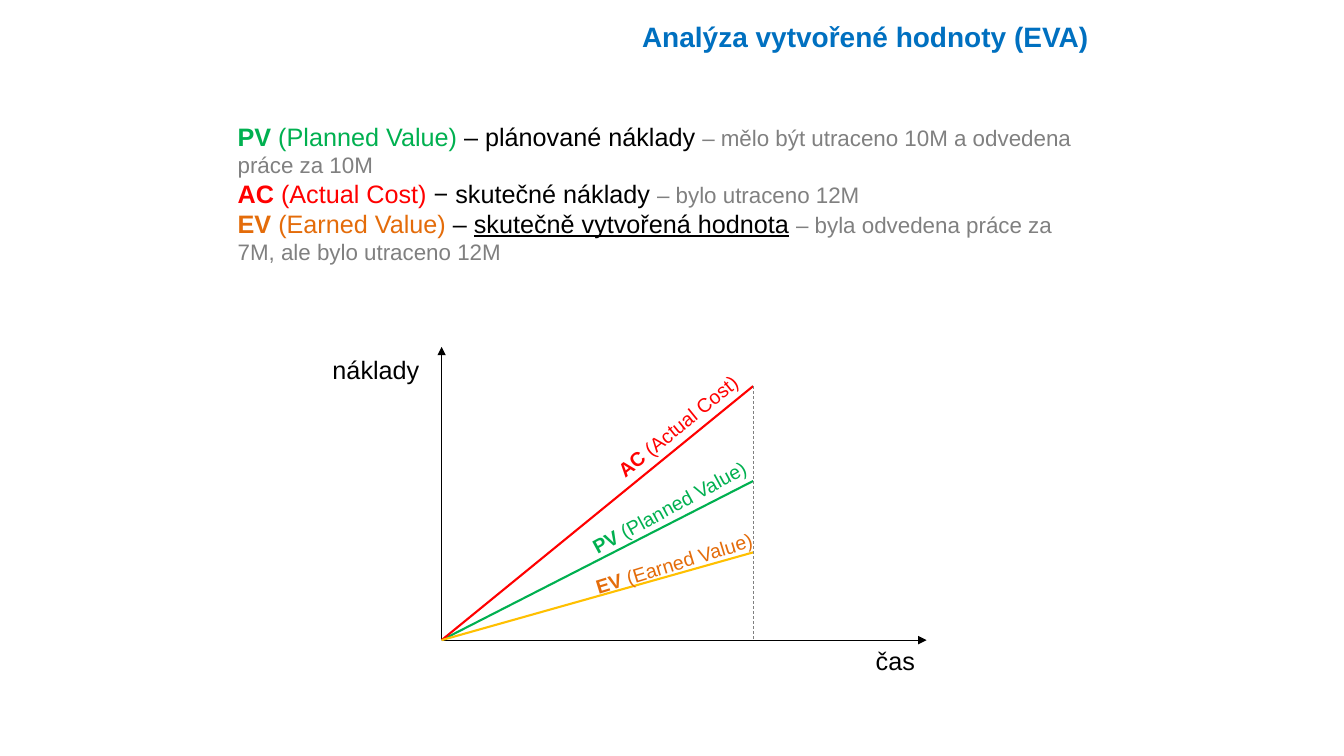
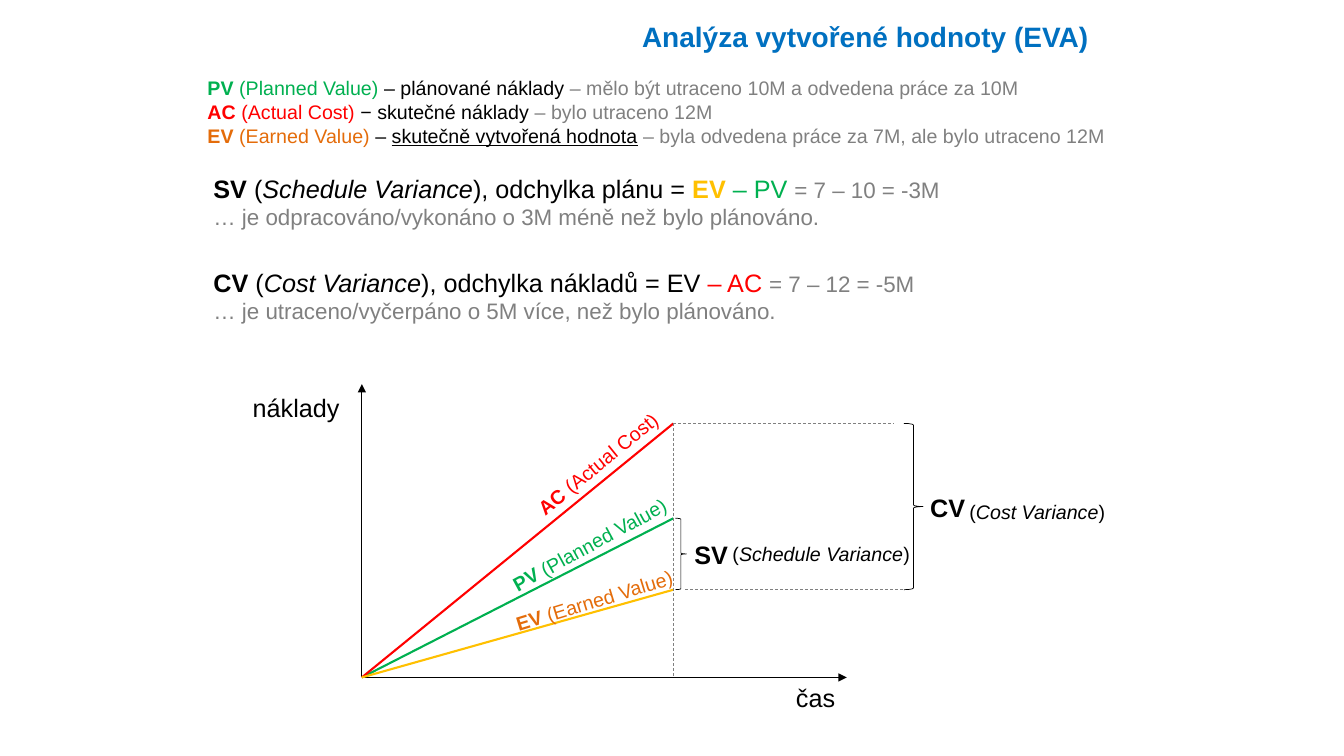
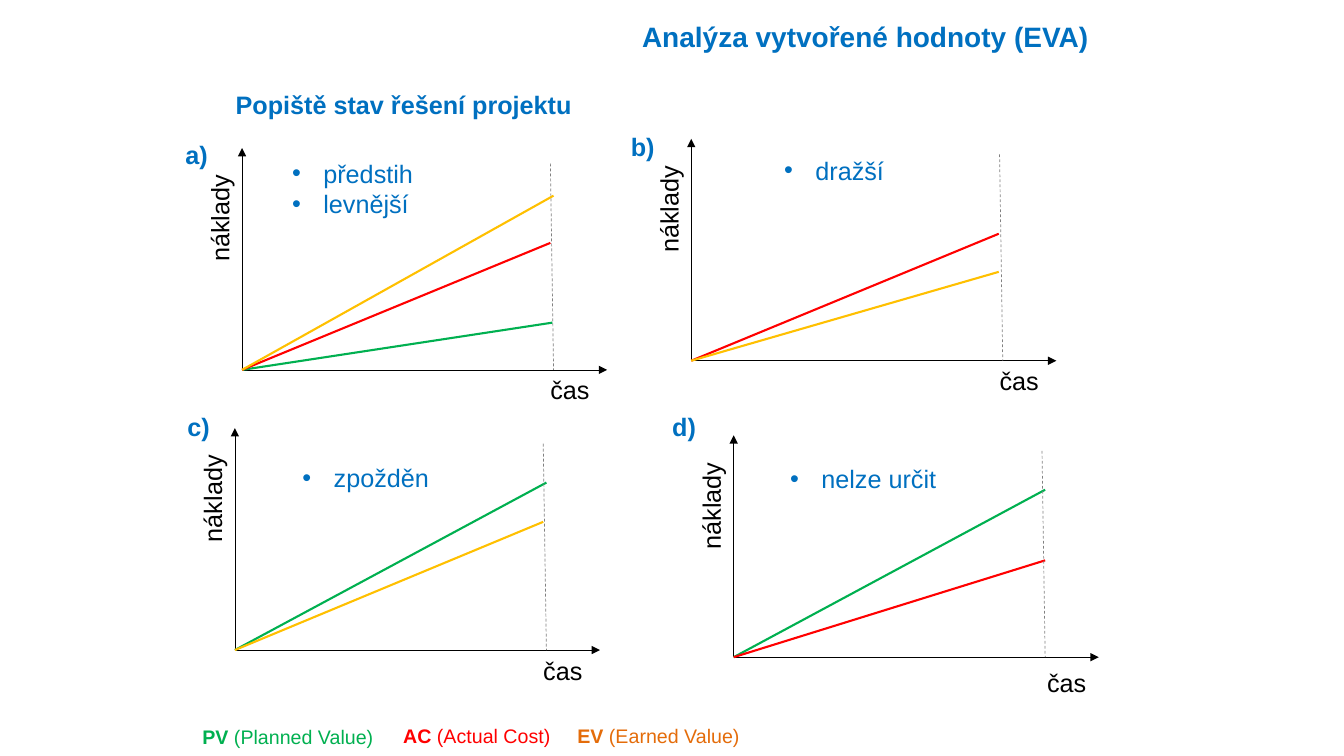
import lxml.etree
import pptx
import pptx.dml.color
import pptx.enum.dml
import pptx.enum.shapes
import pptx.enum.text
import pptx.oxml.ns
import pptx.util

Cm = pptx.util.Cm
Pt = pptx.util.Pt
qn = pptx.oxml.ns.qn


class Theme:
    font = "Arial"
    black, gray, blue = "000000", "808080", "0070C0"
    green, red, orange, yellow = "00B050", "FF0000", "E46C0A", "FFC000"
    title, body, detail, small = 20, 18, 16, 14
    thin, thick = 0.5, 1.5


def add_text(slide, text, left, top, width, height=1.02, *, size=Theme.body, color=Theme.black,
             bold=False, italic=False, underline=False, wrap=False, rotation=0, bullet=False):
    """Take a string, or paragraphs given as lists of (text, format) runs."""
    shape = slide.shapes.add_textbox(Cm(left), Cm(top), Cm(width), Cm(height))
    shape.rotation = rotation
    frame = shape.text_frame
    frame.word_wrap = wrap
    frame.auto_size = pptx.enum.text.MSO_AUTO_SIZE.SHAPE_TO_FIT_TEXT
    base = dict(size=size, color=color, bold=bold, italic=italic, underline=underline)
    paragraphs = [[(line, {})] for line in text.split("\n")] if isinstance(text, str) else text
    for index, runs in enumerate(paragraphs):
        paragraph = frame.add_paragraph() if index else frame.paragraphs[0]
        if bullet:
            properties = paragraph._p.get_or_add_pPr()
            properties.set("marL", str(Cm(0.79)))
            properties.set("indent", str(-Cm(0.79)))
            lxml.etree.SubElement(properties, qn("a:buFont")).set("typeface", Theme.font)
            lxml.etree.SubElement(properties, qn("a:buChar")).set("char", "•")
        for content, changes in runs:
            look = base | changes
            run = paragraph.add_run()
            run.text = content
            run.font.name = Theme.font
            run.font.size = Pt(look["size"])
            run.font.bold = look["bold"]
            run.font.italic = look["italic"]
            run.font.underline = look["underline"]
            run.font.color.rgb = pptx.dml.color.RGBColor.from_string(look["color"])


def add_line(slide, start, end, color=Theme.black, width=Theme.thin, dashed=False, arrow=False):
    connector = slide.shapes.add_connector(
        pptx.enum.shapes.MSO_CONNECTOR.STRAIGHT, *(Cm(value) for value in (*start, *end)))
    connector.line.width = Pt(width)
    connector.line.color.rgb = pptx.dml.color.RGBColor.from_string(color)
    if dashed:
        connector.line.dash_style = pptx.enum.dml.MSO_LINE.DASH
    properties = connector._element.spPr
    if arrow:
        lxml.etree.SubElement(properties.find(qn("a:ln")), qn("a:tailEnd")).set("type", "triangle")
    lxml.etree.SubElement(properties, qn("a:effectLst"))


presentation = pptx.Presentation()
presentation.slide_width, presentation.slide_height = Cm(33.87), Cm(19.05)
slides = [presentation.slides.add_slide(presentation.slide_layouts[6]) for _ in range(3)]
terms_slide, variance_slide, exercise_slide = slides
for slide in slides:
    add_text(slide, "Analýza vytvořené hodnoty (EVA)", 15.93, 0.36, 17.5, 1.12,
             size=Theme.title, color=Theme.blue, bold=True, wrap=True)

# Terms: abbreviation, name, text colour, line colour, label width
terms = {
    "PV": ("PV", " (Planned Value)", Theme.green, Theme.green, 4.85),
    "AC": ("AC ", "(Actual Cost)", Theme.red, Theme.red, 4.24),
    "EV": ("EV ", "(Earned Value)", Theme.orange, Theme.yellow, 4.78),
}
meanings = {
    "PV": ("– ", "plánované náklady", "– mělo být utraceno 10M a odvedena práce za 10M"),
    "AC": ("− ", "skutečné náklady", "– bylo utraceno 12M"),
    "EV": ("– ", "skutečně vytvořená hodnota", "– byla odvedena práce za 7M, ale bylo utraceno 12M"),
}
for slide, box, size, detail_size in (
    (terms_slide, (5.74, 2.92, 21.89, 3.94), Theme.body, Theme.detail),
    (variance_slide, (4.98, 1.8, 23.55, 2.06), Theme.small, Theme.small),
):
    paragraphs = []
    for key, (dash, meaning, example) in meanings.items():
        short, name, color, _, _ = terms[key]
        paragraphs.append([
            (short, dict(color=color, bold=True)),
            (name + " ", dict(color=color)),
            (dash, {}),
            (meaning, dict(underline=key == "EV")),
            (" ", {}),
            (example, dict(color=Theme.gray, size=detail_size)),
        ])
    add_text(slide, paragraphs, *box, size=size, wrap=True)

# Cost-over-time diagrams; all points are offsets from the origin
large = dict(
    axes=(12.22, 7.39), deadline=((7.85, -6.4), (7.85, 0)), cost=(-3, -7.32), turn=0, time=(10.69, 0),
    ends={"PV": (7.85, -4.01), "AC": (7.85, -6.4), "EV": (7.85, -2.21)},
    labels={"AC": (3.84, -5.82, -39.1), "PV": (3.33, -3.78, -28.5), "EV": (3.56, -2.39, -17.1)},
)
small = dict(
    axes=(9.2, 5.59), deadline=((7.77, -5.2), (7.85, 0)), cost=(-1.93, -4.34), turn=270,
    time=(7.52, 0), labels={},
)
variance_origin = (9.12, 17.07)
diagrams = [
    (terms_slide, (11.13, 16.13), large),
    (variance_slide, variance_origin, large),
    (exercise_slide, (6.1, 9.32),
     small | dict(ends={"PV": (7.82, -1.19), "AC": (7.77, -3.2), "EV": (7.85, -4.39)})),
    (exercise_slide, (17.42, 9.09), small | dict(ends={"AC": (7.75, -3.2), "EV": (7.75, -2.24)})),
    (exercise_slide, (5.92, 16.38), small | dict(ends={"PV": (7.85, -4.22), "EV": (7.77, -3.23)})),
    (exercise_slide, (18.49, 16.56),
     small | dict(ends={"PV": (7.85, -4.22), "AC": (7.85, -2.44)}, time=(7.65, 0.13))),
]
for slide, (x, y), diagram in diagrams:
    axis_width, axis_height = diagram["axes"]
    add_line(slide, (x, y), (x, y - axis_height), arrow=True)
    add_line(slide, (x, y), (x + axis_width, y), arrow=True)
    for key, (dx, dy) in diagram["ends"].items():
        add_line(slide, (x, y), (x + dx, y + dy), terms[key][3], Theme.thick)
    add_line(slide, *((x + dx, y + dy) for dx, dy in diagram["deadline"]), Theme.gray, dashed=True)
    add_text(slide, "náklady", x + diagram["cost"][0], y + diagram["cost"][1], 2.72,
             rotation=diagram["turn"])
    add_text(slide, "čas", x + diagram["time"][0], y + diagram["time"][1], 1.5)
    for key, (dx, dy, rotation) in diagram["labels"].items():
        short, name, color, _, width = terms[key]
        add_text(slide, [[(short, dict(bold=True)), (name, {})]], x + dx, y + dy, width, 0.86,
                 size=Theme.small, color=color, rotation=rotation)

# Variances
detail = dict(color=Theme.gray, size=Theme.detail)
add_text(variance_slide, [
    [("SV ", dict(bold=True)), ("(", {}), ("Schedule Variance", dict(italic=True)),
     ("), odchylka plánu = ", {}), ("EV ", dict(color=Theme.yellow, bold=True)),
     ("– PV ", dict(color=Theme.green)), ("= 7 – 10 = -3M", detail)],
    [("… je odpracováno/vykonáno o 3M méně než bylo plánováno.", detail)],
], 5.13, 4.24, 24.21, 1.7, wrap=True)
add_text(variance_slide, [
    [("CV", dict(bold=True)), (" (", {}), ("Cost Variance", dict(italic=True)),
     ("), odchylka nákladů = EV ", {}), ("– AC ", dict(color=Theme.red)), ("= 7 – 12 = -5M", detail)],
    [("… je utraceno/vyčerpáno o 5M více, než bylo plánováno.", detail)],
], 5.13, 6.6, 23.39, 1.7, wrap=True)

levels = {key: variance_origin[1] + dy for key, (_, dy) in large["ends"].items()}
add_line(variance_slide, (16.97, levels["AC"]), (22.53, levels["AC"]), Theme.gray, dashed=True)
add_line(variance_slide, (17.27, levels["EV"]), (22.78, levels["EV"]), Theme.gray, dashed=True)
for top_key, left, width in (("PV", 17.02, 0.28), ("AC", 22.78, 0.48)):
    brace = variance_slide.shapes.add_shape(
        pptx.enum.shapes.MSO_SHAPE.RIGHT_BRACE, Cm(left), Cm(levels[top_key]),
        Cm(width), Cm(levels["EV"] - levels[top_key]))
    brace.shadow.inherit = False
    brace.fill.background()
    brace.line.width = Pt(Theme.thin)
    brace.line.color.rgb = pptx.dml.color.RGBColor.from_string(Theme.black)
for short, short_box, name, name_box in (
    ("SV", (17.25, 13.46, 1.37), "Schedule Variance", (18.21, 13.54, 5.13, 0.86)),
    ("CV", (23.19, 12.29, 1.4), "Cost Variance", (24.18, 12.47, 4.09, 0.86)),
):
    add_text(variance_slide, short, *short_box, bold=True)
    add_text(variance_slide, [[("(", {}), (name, dict(italic=True)), (")", {})]], *name_box,
             size=Theme.small)

# Exercise
add_text(exercise_slide, "Popiště stav řešení projektu", 5.69, 2.13, 9.07,
         color=Theme.blue, bold=True)
for letter, letter_place, answer, answer_box in (
    ("a)", (4.42, 3.38), "předstih\nlevnější", (7.11, 3.86, 3.61, 1.8)),
    ("b)", (15.65, 3.18), "dražší", (19.51, 3.78, 3.05)),
    ("c)", (4.47, 10.24), "zpožděn", (7.37, 11.53, 3.73)),
    ("d)", (16.69, 10.24), "nelze určit", (19.66, 11.56, 4.24)),
):
    add_text(exercise_slide, letter, *letter_place, 1.1, color=Theme.blue, bold=True)
    add_text(exercise_slide, answer, *answer_box, color=Theme.blue, bullet=True)
for key, left, top in (("PV", 4.85, 18.14), ("AC", 9.91, 18.11), ("EV", 14.3, 18.11)):
    short, name, color, _, width = terms[key]
    add_text(exercise_slide, [[(short, dict(bold=True)), (name, {})]], left, top, width, 0.86,
             size=Theme.small, color=color)

presentation.save("out.pptx")
